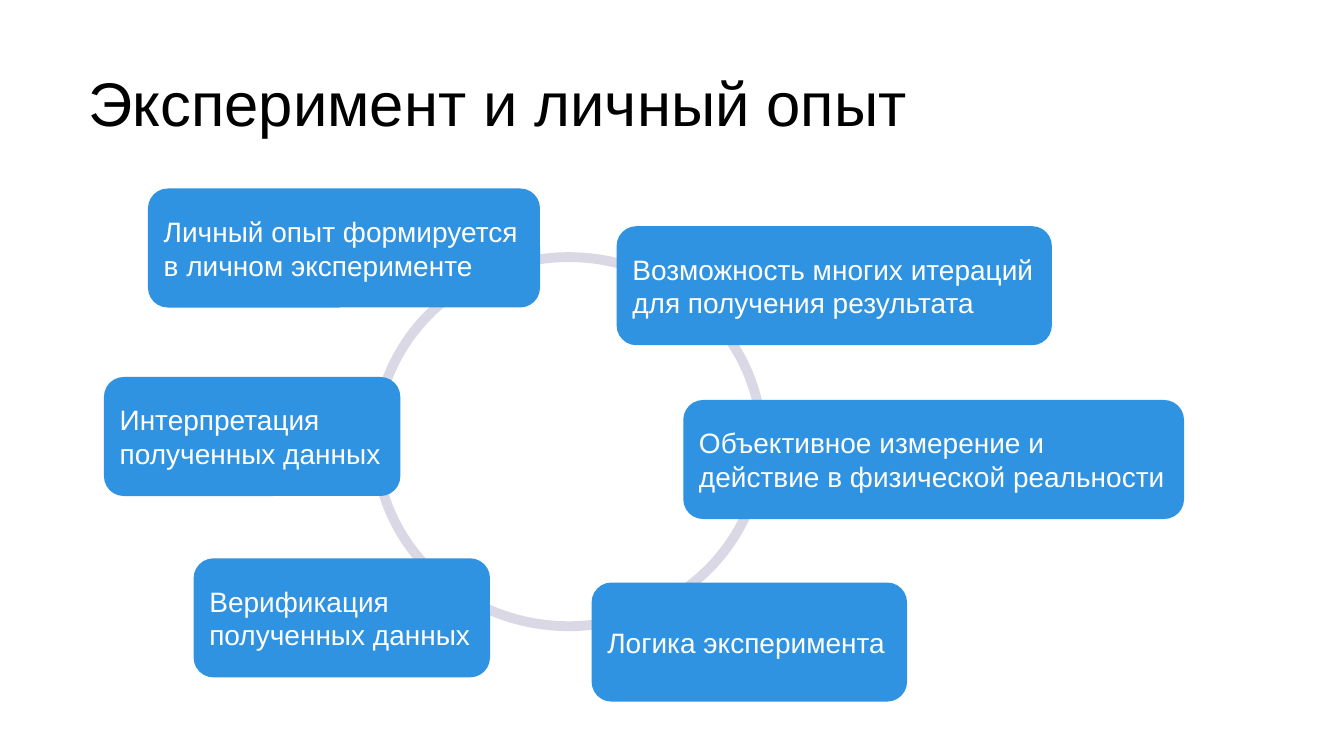
from pptx import Presentation
from pptx.dml.color import RGBColor
from pptx.enum.shapes import MSO_SHAPE as Preset
from pptx.enum.text import MSO_ANCHOR as Anchor, PP_ALIGN as Align
from pptx.util import Cm, Pt

BLACK = RGBColor(0x00, 0x00, 0x00)
WHITE = RGBColor(0xFF, 0xFF, 0xFF)
BLUE = RGBColor(0x2F, 0x93, 0xE2)
LAVENDER = RGBColor(0xD9, 0xD8, 0xE4)
FONT = "Arial"
BOX_HEIGHT = 3

# Left, top, width in centimetres, then the paragraphs
STEPS = [
    (3.73, 4.75, 9.88, ["Личный опыт формируется в личном эксперименте"]),
    (15.54, 5.7, 10.97, ["Возможность многих итераций для получения результата"]),
    (17.22, 10.08, 12.62, ["Объективное измерение и",
                           "действие в физической реальности"]),
    (4.88, 14.07, 7.47, ["Верификация полученных данных"]),
    (2.62, 9.5, 7.47, ["Интерпретация полученных данных"]),
    (14.91, 14.68, 7.95, ["Логика эксперимента"]),
]


def add_text(paragraph, text, size, color):
    paragraph.alignment = Align.LEFT
    run = paragraph.add_run()
    run.text = text
    run.font.name = FONT
    run.font.size = Pt(size)
    run.font.color.rgb = color


presentation = Presentation()
presentation.slide_width = Cm(33.87)
presentation.slide_height = Cm(19.05)
slide = presentation.slides.add_slide(presentation.slide_layouts[5])

# Title
title = slide.shapes.title
title.left, title.top, title.width, title.height = Cm(1.98), Cm(0.84), Cm(29.21), Cm(3.68)
title.text_frame.vertical_anchor = Anchor.MIDDLE
heading = title.text_frame.paragraphs[0]
heading.line_spacing = 0.9
add_text(heading, "Эксперимент и личный опыт", 44, BLACK)

# Ring behind the steps
ring = slide.shapes.add_shape(Preset.OVAL, Cm(9.47), Cm(6.48), Cm(9.73), Cm(9.3))
ring.shadow.inherit = False
ring.fill.background()
ring.line.color.rgb = LAVENDER
ring.line.width = Pt(7)

# Steps around the ring
for left, top, width, lines in STEPS:
    box = slide.shapes.add_shape(
        Preset.ROUNDED_RECTANGLE, Cm(left), Cm(top), Cm(width), Cm(BOX_HEIGHT))
    box.shadow.inherit = False
    box.fill.solid()
    box.fill.fore_color.rgb = BLUE
    box.line.fill.background()
    frame = box.text_frame
    frame.word_wrap = True
    frame.vertical_anchor = Anchor.MIDDLE
    frame.margin_left = Cm(0.25)
    frame.margin_right = Cm(0.2)
    for number, line in enumerate(lines):
        paragraph = frame.add_paragraph() if number else frame.paragraphs[0]
        add_text(paragraph, line, 20, WHITE)

presentation.save("out.pptx")
